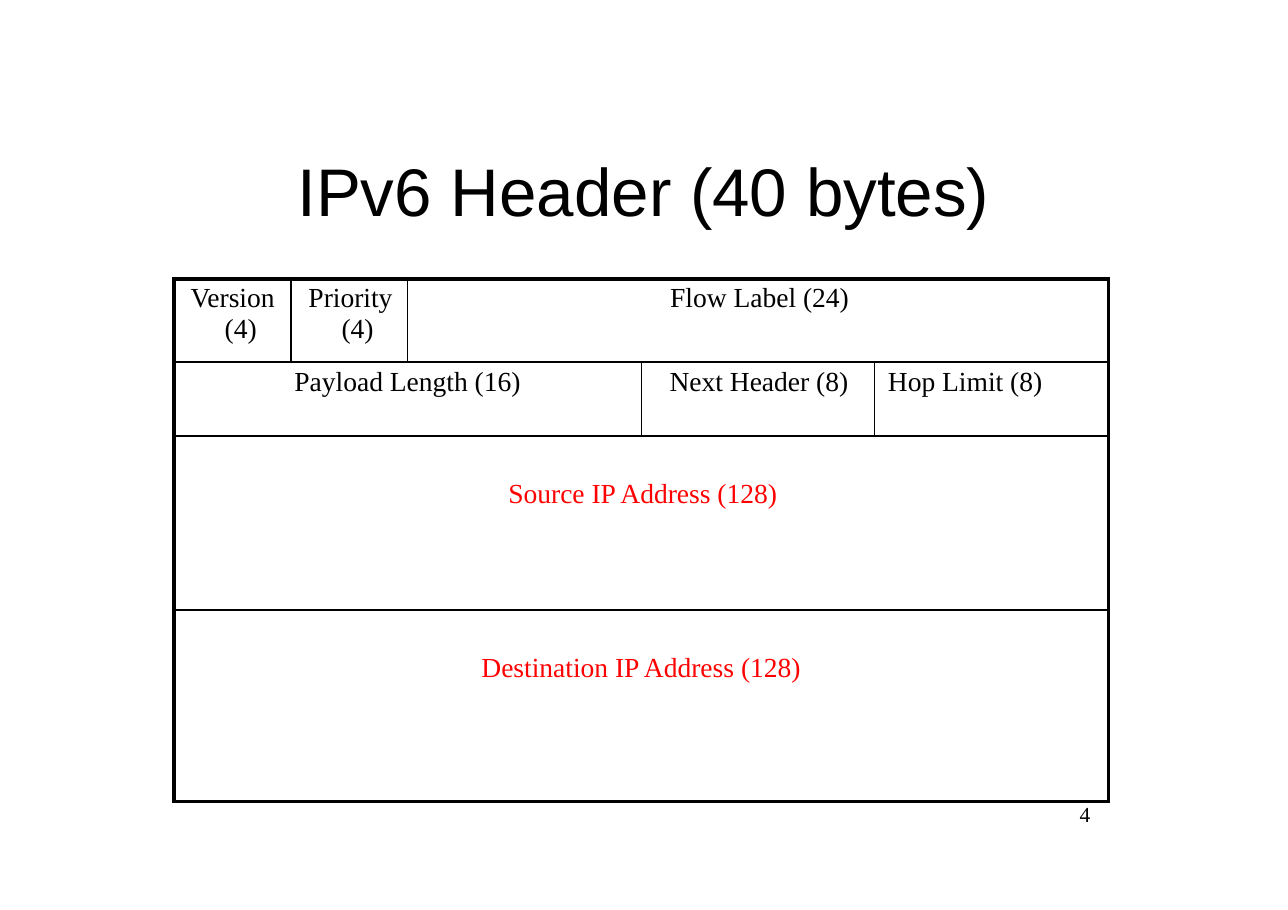
from dataclasses import dataclass

from lxml import etree
from pptx import Presentation, util as u
from pptx.dml.color import RGBColor
from pptx.enum import text
from pptx.oxml import ns

BLACK = RGBColor(0, 0, 0)
LINE = RGBColor(1, 1, 1)
RED = RGBColor(255, 0, 0)
SERIF = "Times New Roman"
SANS = "Arial"
PLAIN = "{2D5ABB26-0587-4C30-8999-92F81FD0307C}"
UNIT = 1.06
COLS = (UNIT, UNIT, 2 * UNIT, 2 * UNIT, 2 * UNIT)
ROWS = (0.76, 0.67, 1.58, 1.74)
LEFT, CENTER = text.PP_ALIGN.LEFT, text.PP_ALIGN.CENTER


@dataclass
class Field:
    row: int
    col: int
    span: int
    labels: tuple[str, ...]
    color: RGBColor = BLACK
    align: text.PP_ALIGN = CENTER
    top: float = 0.04
    left: float = 0
    hang: float = 0
    right: float = 1


FIELDS = (
    Field(0, 0, 1, ("Version ", "(4)"), align=LEFT, left=0.46, hang=0.31, right=1.5),
    Field(0, 1, 1, ("Priority (4)",), align=LEFT, left=0.46, hang=0.3),
    Field(0, 2, 3, ("Flow Label (24)",), left=0.03),
    Field(1, 0, 3, ("Payload Length (16)",)),
    Field(1, 3, 1, ("Next Header (8)",), left=0.02),
    Field(1, 4, 1, ("Hop Limit (8)",), align=LEFT, left=0.12),
    Field(2, 0, 5, ("Source IP Address ", "(128)"), RED, top=0.39, left=0.03),
    Field(3, 0, 5, ("Destination IP Address ", "(128)"), RED, top=0.39),
)


def add_run(para, words: str, size: float, face: str, color: RGBColor) -> None:
    run = para.add_run()
    run.text = words
    run.font.size = u.Pt(size)
    run.font.name = face
    run.font.color.rgb = color


def set_inset(box, left: float = 0, top: float = 0) -> None:
    box.margin_left, box.margin_top = u.Inches(left), u.Inches(top)
    box.margin_right = box.margin_bottom = 0


def add_edge(props, side: str, width: float) -> None:
    edge = etree.SubElement(props, ns.qn(f"a:ln{side}"), w=str(u.Pt(width)))
    fill = etree.SubElement(edge, ns.qn("a:solidFill"))
    etree.SubElement(fill, ns.qn("a:srgbClr"), val=str(LINE))


def draw_field(table, field: Field) -> None:
    cell = table.cell(field.row, field.col)
    end = field.col + field.span
    if field.span > 1:
        cell.merge(table.cell(field.row, end - 1))
    set_inset(cell, top=field.top)
    para = cell.text_frame.paragraphs[0]
    para.alignment = field.align
    props = para._p.get_or_add_pPr()
    props.set("marL", str(u.Inches(field.left)))
    props.set("indent", str(-u.Inches(field.hang)))
    for label in field.labels:
        add_run(para, label, 18, SERIF, field.color)

    prior = next((f.right for f in FIELDS
                  if f.row == field.row and f.col + f.span == field.col), 3)
    edges = {
        "L": prior,
        "R": 2.25 if end == len(COLS) else field.right,
        "T": 3 if field.row == 0 else 1.5,
        "B": 2.25 if field.row == len(ROWS) - 1 else 1.5,
    }
    for side, width in edges.items():
        add_edge(cell._tc.get_or_add_tcPr(), side, width)
    cell.fill.background()


def draw_table(slide) -> None:
    frame = slide.shapes.add_table(
        len(ROWS), len(COLS), u.Inches(1.58), u.Inches(2.53),
        u.Inches(sum(COLS)), u.Inches(sum(ROWS)))
    table = frame.table
    table.first_row = table.horz_banding = False
    table._tbl.tblPr.find(ns.qn("a:tableStyleId")).text = PLAIN
    for col, width in zip(table.columns, COLS):
        col.width = u.Inches(width)
    for row, height in zip(table.rows, ROWS):
        row.height = u.Inches(height)
    for field in FIELDS:
        draw_field(table, field)


def draw_title(slide) -> None:
    title = slide.shapes.title
    title.left, title.top = u.Inches(2.69), u.Inches(1.28)
    title.width, title.height = u.Inches(6.32), u.Inches(0.76)
    frame = title.text_frame
    frame.auto_size = text.MSO_AUTO_SIZE.NONE
    frame.vertical_anchor = text.MSO_ANCHOR.TOP
    set_inset(frame, left=0.01, top=0.07)
    para = frame.paragraphs[0]
    para.alignment = LEFT
    add_run(para, "IPv6 Header (40 bytes)", 44, SANS, BLACK)


def draw_page(slide) -> None:
    box = slide.shapes.add_textbox(
        u.Inches(9.77), u.Inches(7.27), u.Inches(0.25), u.Inches(0.24))
    frame = box.text_frame
    frame.word_wrap = True
    set_inset(frame, left=0.03)
    add_run(frame.paragraphs[0], "4", 14, SERIF, BLACK)


def main() -> None:
    deck = Presentation()
    deck.slide_width, deck.slide_height = u.Inches(11.69), u.Inches(8.26)
    slide = deck.slides.add_slide(deck.slide_layouts[5])
    draw_page(slide)
    draw_title(slide)
    draw_table(slide)
    deck.save("out.pptx")


if __name__ == "__main__":
    main()
